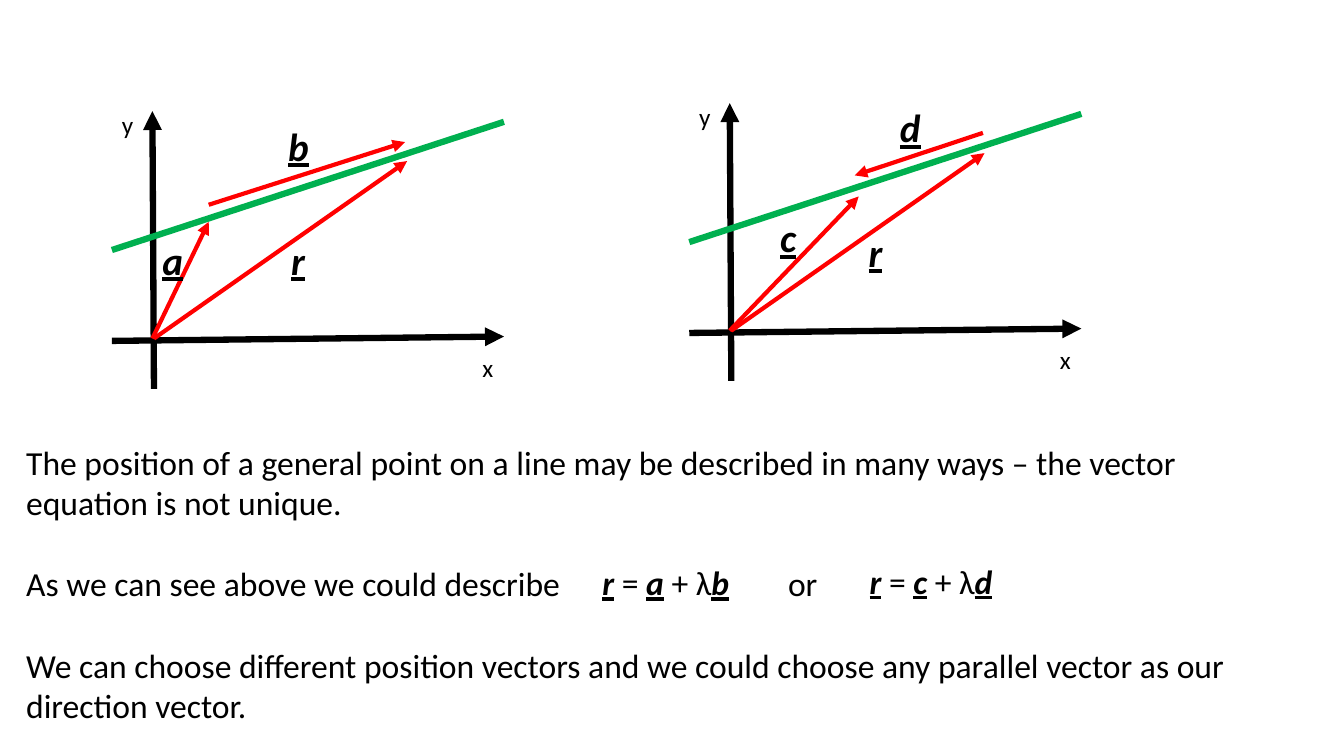
from pptx import Presentation
from pptx.dml.color import RGBColor
from pptx.enum.shapes import MSO_CONNECTOR as Connector
from pptx.enum.text import MSO_AUTO_SIZE as AutoSize, PP_ALIGN as Align
from pptx.oxml.ns import qn
from pptx.util import Cm, Pt
from lxml.etree import SubElement

BLACK, GREEN, RED = "000000", "00B050", "FF0000"
ORIGIN = (3.84, 8.53)


def color(hex_string):
    return RGBColor.from_string(hex_string)


def add_line(slide, start, end, line_color, width, arrow=True):
    points = [Cm(value) for value in (*start, *end)]
    connector = slide.shapes.add_connector(Connector.STRAIGHT, *points)
    connector.line.color.rgb = color(line_color)
    connector.line.width = Pt(width)
    if arrow:
        SubElement(connector.line._get_or_add_ln(), qn("a:tailEnd"), type="triangle")
    SubElement(connector._element.spPr, qn("a:effectLst"))


def add_text(slide, text, left, top, width, height, size=24, align=Align.LEFT,
             wrap=True, gap=0, tab=None):
    """Each line is a paragraph; letters between underscores are vectors."""
    box = slide.shapes.add_textbox(Cm(left), Cm(top), Cm(width), Cm(height))
    frame = box.text_frame
    frame.word_wrap = wrap
    frame.auto_size = AutoSize.SHAPE_TO_FIT_TEXT
    lines = text.split("\n")
    for index, line in enumerate(lines):
        paragraph = frame.add_paragraph() if index else frame.paragraphs[0]
        paragraph.alignment = align
        if index < len(lines) - 1:
            paragraph.space_after = Pt(gap)
        if tab and "\t" in line:
            tab_list = SubElement(paragraph._p.get_or_add_pPr(), qn("a:tabLst"))
            SubElement(tab_list, qn("a:tab"), pos=str(Cm(tab)), algn="l")
        for position, part in enumerate(line.split("_")):
            if not part:
                continue
            run = paragraph.add_run()
            run.text = part
            font = run.font
            font.name, font.size = "Calibri", Pt(size)
            font.color.rgb = color(BLACK)
            if position % 2:
                font.bold = font.italic = font.underline = True


def add_graph(slide, offset, vectors, labels):
    def place(point):
        return point[0] + offset[0], point[1] + offset[1]

    # Axes and the line itself
    add_line(slide, place((3.88, 9.8)), place((3.84, 2.8)), BLACK, 4.5)
    add_line(slide, place((2.82, 8.59)), place((12.7, 8.48)), BLACK, 4.5)
    add_line(slide, place((2.82, 6.3)), place((12.7, 3.07)), GREEN, 4.5, arrow=False)

    # Position and direction vectors, with r shared by both graphs
    for start, end in [*vectors, ((3.88, 8.53), (10.26, 4.06))]:
        add_line(slide, place(start), place(end), RED, 3)

    # Labels
    for name, point in (("x", (11.91, 8.76)), ("y", (2.82, 2.62))):
        add_text(slide, name, *place(point), 0.8, 1.02, size=18, wrap=False)
    for name, point, width in [*labels, ("r", (7.09, 5.82), 0.86)]:
        add_text(slide, f"_{name}_", *place(point), width, 1.45, size=28, wrap=False)


def main():
    presentation = Presentation()
    presentation.slide_width, presentation.slide_height = Cm(33.87), Cm(19.05)
    slide = presentation.slides.add_slide(presentation.slide_layouts[6])

    # Two descriptions of the same line
    add_graph(slide, (0, 0),
              vectors=[(ORIGIN, (5.26, 5.59)), ((5.26, 5.16), (10.21, 3.58))],
              labels=[("a", (3.84, 5.82), 1.04), ("b", (7.01, 2.95), 1.04)])
    add_graph(slide, (14.55, -0.2),
              vectors=[(ORIGIN, (7.09, 5.15)), ((10.22, 3.55), (6.99, 4.62))],
              labels=[("c", (4.86, 5.46), 0.91), ("d", (7.88, 2.69), 1.04)])

    # Explanation
    add_text(slide,
             "The position of a general point on a line may be described in many ways "
             "– the vector equation is not unique.\n"
             "As we can see above we could describe\tor\n"
             "We can choose different position vectors and we could choose any parallel "
             "vector as our direction vector.",
             0.41, 11, 32.61, 7.44, gap=29.3, tab=19.2)

    # Equations
    add_text(slide, "_r_ = _c_ + λ_d_", 21.18, 14, 4.57, 1.27, align=Align.CENTER)
    add_text(slide, "_r_ = _a_ + λ_b_", 14.15, 14.04, 5.26, 1.27, align=Align.CENTER)

    presentation.save("out.pptx")


if __name__ == "__main__":
    main()
